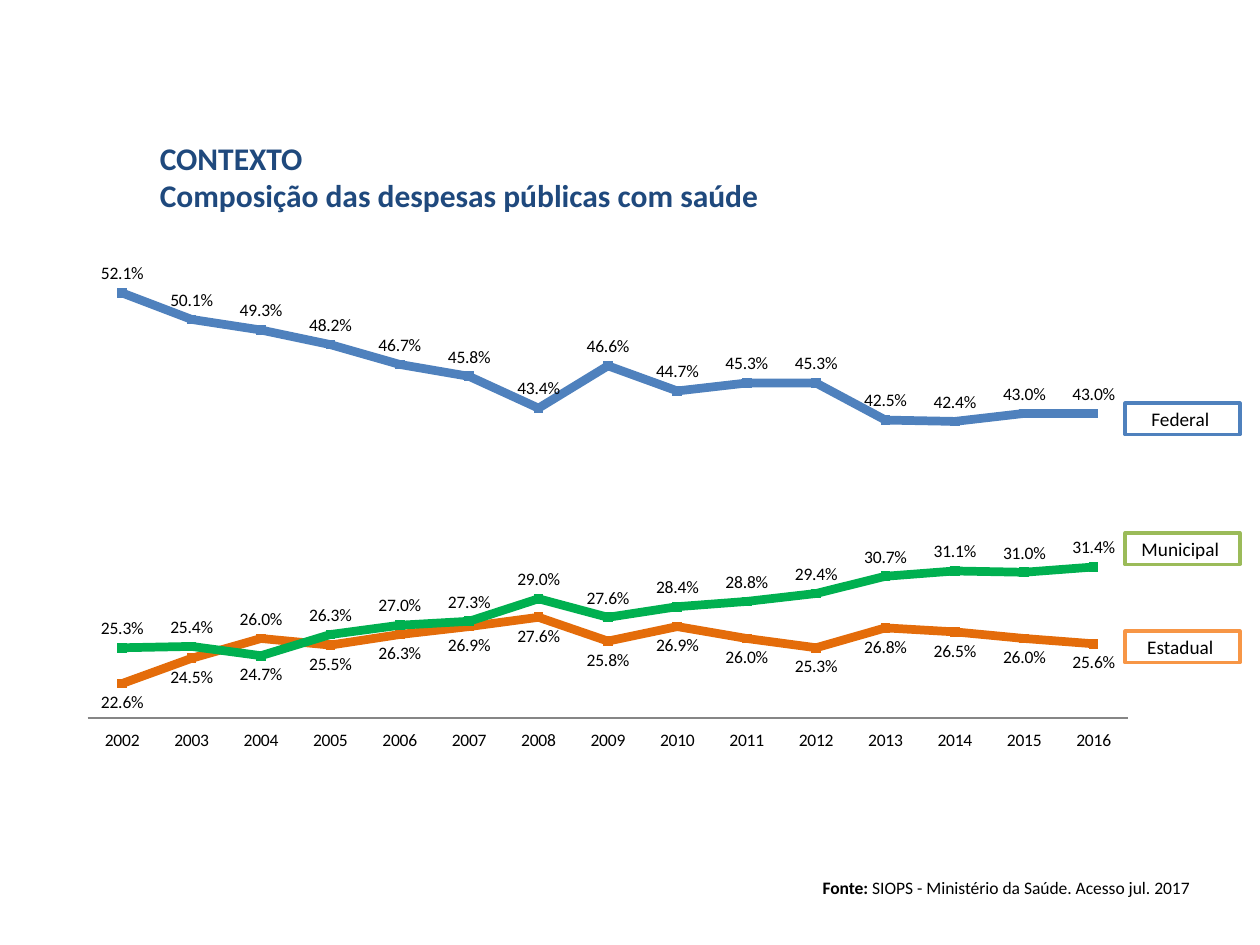
from dataclasses import dataclass

from lxml.etree import SubElement
from pptx import Presentation
from pptx.chart.data import CategoryChartData
from pptx.dml.color import RGBColor
from pptx.enum.chart import (XL_CHART_TYPE, XL_LABEL_POSITION, XL_MARKER_STYLE,
                             XL_TICK_LABEL_POSITION, XL_TICK_MARK)
from pptx.enum.shapes import MSO_SHAPE
from pptx.enum.text import MSO_ANCHOR, PP_ALIGN
from pptx.oxml.ns import qn
from pptx.util import Inches, Pt


@dataclass(frozen=True)
class Theme:
    font: str = "Calibri"
    title: str = "1F497D"
    text: str = "000000"
    paper: str = "FFFFFF"
    axis: str = "868686"
    title_size: int = 18
    tag_size: int = 11
    small_size: int = 10


@dataclass(frozen=True)
class Sphere:
    """A level of government: its line, its tag and its label side."""
    name: str
    color: str
    tag_color: str
    tag_top: float
    label_side: XL_LABEL_POSITION
    percents: tuple


THEME = Theme()
ABOVE, BELOW = XL_LABEL_POSITION.ABOVE, XL_LABEL_POSITION.BELOW
YEARS = [str(year) for year in range(2002, 2017)]
CROSSED = YEARS.index("2004")  # the lower lines trade places here
SPHERES = [
    Sphere("Federal", "4F81BD", "4F81BD", 3.2, ABOVE,
           (52.1, 50.1, 49.3, 48.2, 46.7, 45.8, 43.4, 46.6, 44.7, 45.3, 45.3,
            42.5, 42.4, 43.0, 43.0)),
    Sphere("Estadual", "E46C0A", "F79646", 5.01, BELOW,
           (22.6, 24.5, 26.0, 25.5, 26.3, 26.9, 27.6, 25.8, 26.9, 26.0, 25.3,
            26.8, 26.5, 26.0, 25.6)),
    Sphere("Municipal", "00B050", "9BBB59", 4.23, ABOVE,
           (25.3, 25.4, 24.7, 26.3, 27.0, 27.3, 29.0, 27.6, 28.4, 28.8, 29.4,
            30.7, 31.1, 31.0, 31.4)),
]


def rgb(color: str) -> RGBColor:
    return RGBColor.from_string(color)


def style(font, size: float, color: str = THEME.text, bold: bool = False) -> None:
    font.name, font.size, font.bold = THEME.font, Pt(size), bold
    font.color.rgb = rgb(color)


def add_tag(s, sphere: Sphere) -> None:
    sp = s.shapes.add_shape(MSO_SHAPE.RECTANGLE, Inches(8.93),
                            Inches(sphere.tag_top), Inches(0.91), Inches(0.25))
    sp.shadow.inherit = False
    sp.fill.solid()
    sp.fill.fore_color.rgb = rgb(THEME.paper)
    sp.line.color.rgb = rgb(sphere.tag_color)
    sp.line.width = Pt(2)
    tf = sp.text_frame
    tf.vertical_anchor = MSO_ANCHOR.MIDDLE
    tf.text = sphere.name + " "
    p = tf.paragraphs[0]
    p.alignment = PP_ALIGN.CENTER
    style(p.runs[0].font, THEME.tag_size)


def add_text_frame(s, left: float, top: float, width: float, height: float):
    tf = s.shapes.add_textbox(Inches(left), Inches(top), Inches(width),
                              Inches(height)).text_frame
    tf.word_wrap = True
    return tf


def set_plot_area(chart, x: float, y: float, w: float, h: float) -> None:
    plot_area = chart.plots[0]._element.getparent()
    layout = plot_area.find(qn("c:layout"))
    if layout is None:
        layout = SubElement(plot_area, qn("c:layout"))
        plot_area.insert(0, layout)
    manual = SubElement(layout, qn("c:manualLayout"))
    for tag, value in (("layoutTarget", "inner"), ("xMode", "edge"),
                       ("yMode", "edge"), ("x", x), ("y", y), ("w", w), ("h", h)):
        SubElement(manual, qn("c:" + tag)).set("val", str(value))


def style_series(series, sphere: Sphere) -> None:
    color = rgb(sphere.color)
    series.smooth = False
    series.format.line.color.rgb = color
    series.format.line.width = Pt(5)
    marker = series.marker
    marker.style, marker.size = XL_MARKER_STYLE.SQUARE, 5
    marker.format.fill.solid()
    marker.format.fill.fore_color.rgb = color
    marker.format.line.color.rgb = color
    labels = series.data_labels
    labels.show_value = True
    labels.number_format, labels.number_format_is_linked = "0.0%", False
    labels.position = sphere.label_side
    style(labels.font, THEME.small_size)


def add_spending_chart(s) -> None:
    data = CategoryChartData(number_format="0.0%")
    data.categories = YEARS
    for sphere in SPHERES:
        data.add_series(sphere.name, [round(v / 100, 3) for v in sphere.percents])
    chart = s.shapes.add_chart(XL_CHART_TYPE.LINE_MARKERS, Inches(0.54),
                               Inches(1.87), Inches(8.57), Inches(4.71), data).chart
    chart.has_title = chart.has_legend = False
    style(chart.font, THEME.small_size)
    set_plot_area(chart, 0.018, 0.032, 0.964, 0.781)

    # Axes
    value_axis, category_axis = chart.value_axis, chart.category_axis
    value_axis.minimum_scale, value_axis.maximum_scale = 0.2, 0.55
    value_axis.has_major_gridlines = False
    value_axis.visible = False
    category_axis.major_tick_mark = XL_TICK_MARK.NONE
    category_axis.tick_label_position = XL_TICK_LABEL_POSITION.LOW
    category_axis.format.line.color.rgb = rgb(THEME.axis)

    # Lines and labels
    plot = chart.plots[0]
    plot.vary_by_categories = False
    for series, sphere in zip(plot.series, SPHERES):
        style_series(series, sphere)
    for series, side in zip(list(plot.series)[1:], (ABOVE, BELOW)):
        label = series.points[CROSSED].data_label
        style(label.font, THEME.small_size)
        label.position = side


def main() -> None:
    prs = Presentation()
    prs.slide_width, prs.slide_height = Inches(10), Inches(7.5)
    s = prs.slides.add_slide(prs.slide_layouts[6])

    # Tags at the line ends
    for sphere in SPHERES:
        add_tag(s, sphere)

    # Title
    tf = add_text_frame(s, 1.17, 1.05, 8.6, 0.71)
    tf.text = "CONTEXTO\nComposição das despesas públicas com saúde"
    for p in tf.paragraphs:
        style(p.runs[0].font, THEME.title_size, THEME.title, bold=True)

    # Source line
    p = add_text_frame(s, 6.43, 6.91, 3.26, 0.27).paragraphs[0]
    for text, bold in (("Fonte: ", True),
                       ("SIOPS - Ministério da Saúde. Acesso jul. 2017", False)):
        r = p.add_run()
        r.text = text
        style(r.font, THEME.small_size, bold=bold)

    add_spending_chart(s)
    prs.save("out.pptx")


if __name__ == "__main__":
    main()
